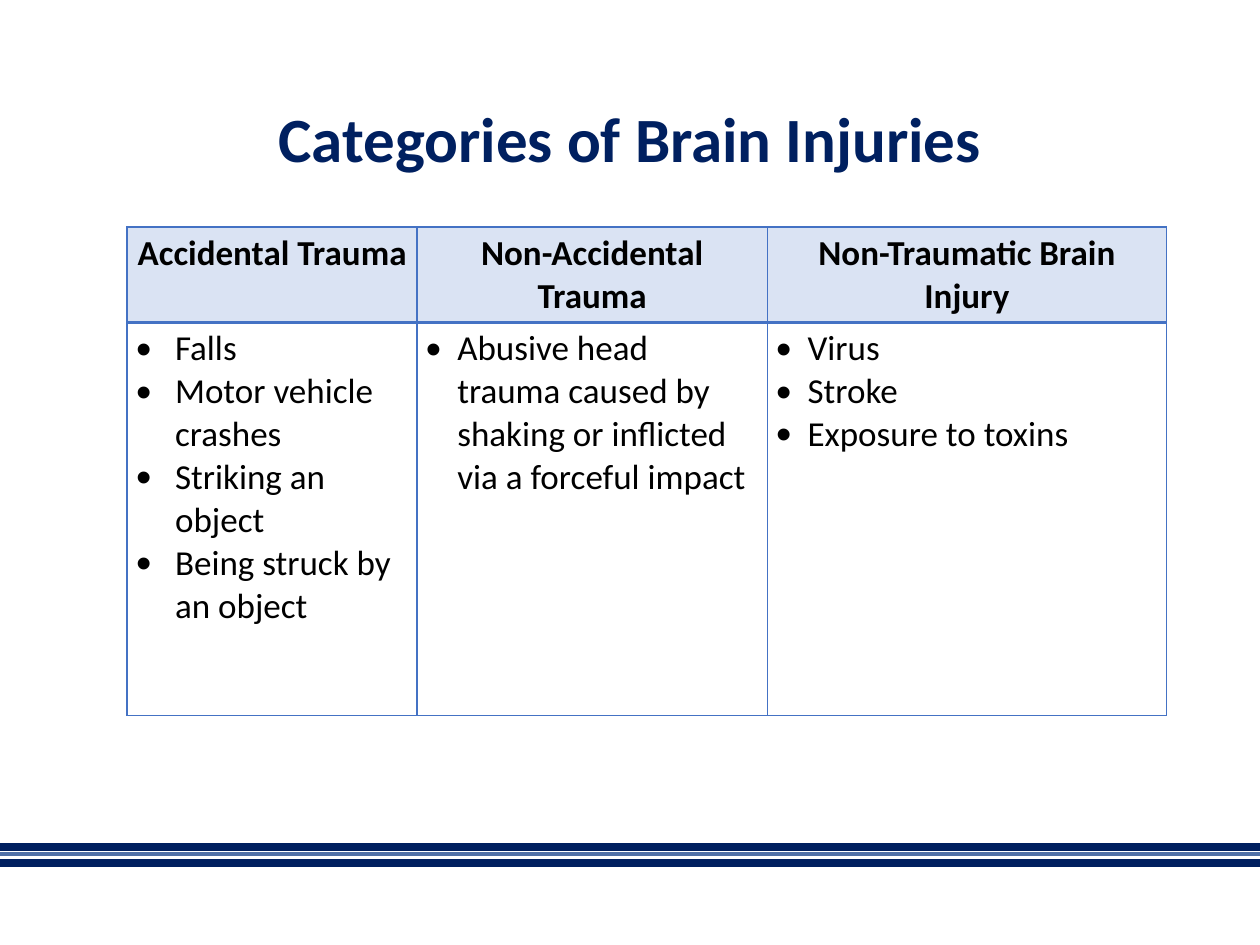
from dataclasses import dataclass

from lxml.etree import SubElement
from pptx import Presentation
from pptx.dml.color import RGBColor as RGB
from pptx.enum.shapes import MSO_CONNECTOR as CONN
from pptx.enum.text import MSO_ANCHOR as ANCHOR, PP_ALIGN as ALIGN
from pptx.oxml import parse_xml
from pptx.oxml.ns import nsdecls, qn
from pptx.util import Inches, Pt


@dataclass(frozen=True)
class Theme:
    font: str = "Calibri"
    title_size: float = 36
    body_size: float = 20
    title: str = "002060"
    text: str = "000000"
    border: str = "4472C4"
    header: str = "DAE3F3"
    body: str = "FFFFFF"
    band: str = "001F5F"
    band_inner: str = "5070A7"


THEME = Theme()
WIDTH, HEIGHT = 10, 7.5
COLUMNS = [  # heading, width, bullet indent, bullets
    ("Accidental Trauma", 2.3, 0.31,
     ["Falls", "Motor vehicle crashes", "Striking an object", "Being struck by an object"]),
    ("Non-Accidental Trauma", 2.78, 0.25,
     ["Abusive head trauma caused by shaking or inflicted via a forceful impact"]),
    ("Non-Traumatic Brain Injury", 3.17, 0.25,
     ["Virus", "Stroke", "Exposure to toxins"]),
]
ROWS = (0.76, 3.12)


def style_runs(p, size, color, bold=False):
    for r in p.runs:
        r.font.name, r.font.size, r.font.bold = THEME.font, Pt(size), bold
        r.font.color.rgb = RGB.from_string(color)


def add_rule(s, y, color, weight):
    line = s.shapes.add_connector(CONN.STRAIGHT, 0, Inches(y), Inches(WIDTH), Inches(y))
    line.line.color.rgb = RGB.from_string(color)
    line.line.width = Pt(weight)
    SubElement(line._element.spPr, qn("a:effectLst"))


def set_title(s, text):
    sp = s.shapes.title
    sp.left, sp.top, sp.width, sp.height = map(Inches, (0.69, 0.4, 8.62, 1.45))
    tf = sp.text_frame
    tf.text = text
    tf.vertical_anchor = ANCHOR.MIDDLE
    p = tf.paragraphs[0]
    p.alignment, p.line_spacing = ALIGN.CENTER, 0.9
    style_runs(p, THEME.title_size, THEME.title, bold=True)


def add_bullet(p, indent):
    pPr = p._p.get_or_add_pPr()
    pPr.set("marL", str(Inches(indent)))
    pPr.set("indent", str(-Inches(indent)))
    SubElement(pPr, qn("a:buSzPct"), val="125000")
    SubElement(pPr, qn("a:buFont"), typeface="Arial")
    SubElement(pPr, qn("a:buChar"), char="•")


def format_cell(cell, fill, top=1, bottom=1):
    """Set insets, fill and borders; top and bottom are border weights in points."""
    cell.margin_left = cell.margin_right = Inches(0.07)
    cell.margin_top = cell.margin_bottom = Inches(0.04)
    cell.fill.solid()
    cell.fill.fore_color.rgb = RGB.from_string(fill)
    tcPr = cell._tc.get_or_add_tcPr()
    # Borders must come before the fill, in this order
    for i, (side, weight) in enumerate(zip("LRTB", (1, 1, top, bottom))):
        tcPr.insert(i, parse_xml(
            f'<a:ln{side} {nsdecls("a")} w="{Pt(weight)}"><a:solidFill>'
            f'<a:srgbClr val="{THEME.border}"/></a:solidFill></a:ln{side}>'))


def fill_heading(cell, text):
    format_cell(cell, THEME.header, bottom=2)
    cell.text_frame.text = text
    p = cell.text_frame.paragraphs[0]
    p.alignment = ALIGN.CENTER
    style_runs(p, THEME.body_size, THEME.text, bold=True)


def fill_bullets(cell, items, indent):
    format_cell(cell, THEME.body, top=2)
    cell.text_frame.text = "\n".join(items)
    for p in cell.text_frame.paragraphs:
        add_bullet(p, indent)
        style_runs(p, THEME.body_size, THEME.text)


def add_category_table(s):
    total = sum(width for _, width, _, _ in COLUMNS)
    table = s.shapes.add_table(len(ROWS), len(COLUMNS), Inches(1.01), Inches(1.8),
                               Inches(total), Inches(sum(ROWS))).table
    table.first_row = table.horz_banding = False
    for row, height in zip(table.rows, ROWS):
        row.height = Inches(height)
    for i, (heading, width, indent, items) in enumerate(COLUMNS):
        table.columns[i].width = Inches(width)
        fill_heading(table.cell(0, i), heading)
        fill_bullets(table.cell(1, i), items, indent)


def main():
    prs = Presentation()
    prs.slide_width, prs.slide_height = Inches(WIDTH), Inches(HEIGHT)
    s = prs.slides.add_slide(prs.slide_layouts[5])
    for y, color, weight in ((6.72, THEME.band, 4.5), (6.78, THEME.band_inner, 2.25),
                             (6.85, THEME.band, 4.5)):
        add_rule(s, y, color, weight)
    set_title(s, "Categories of Brain Injuries")
    add_category_table(s)
    prs.save("out.pptx")


if __name__ == "__main__":
    main()
